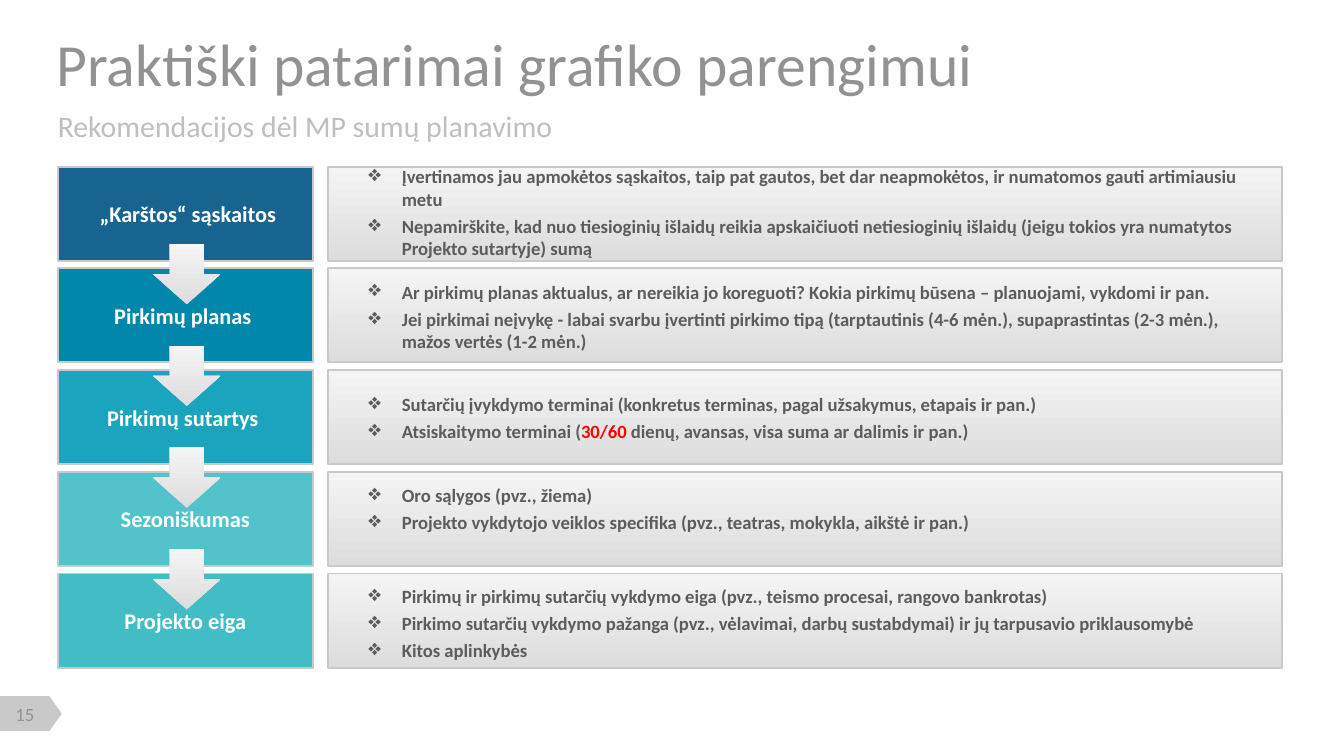
import lxml.etree
import pptx
import pptx.dml.color
import pptx.enum.shapes
import pptx.enum.text
import pptx.oxml.ns
import pptx.util

SHAPE = pptx.enum.shapes.MSO_SHAPE
ALIGN = pptx.enum.text.PP_ALIGN
ANCHOR = pptx.enum.text.MSO_ANCHOR

SLIDE_WIDTH = pptx.util.Inches(10)
SLIDE_HEIGHT = SLIDE_WIDTH * 9 // 16
CELL = SLIDE_WIDTH / 100

FONT = "Calibri"
GREY = "C9C9C9"
TITLE_GREY = "929292"
ADVICE_GREY = "5C5C5C"
HIGHLIGHT = "30/60 "
HIGHLIGHT_RED = "FF0000"

ROW_HEIGHT = 7
ROW_PITCH = 7.57
TOPICS = [
    (" „Karštos“ sąskaitos", "176490", -0.1, 7.2, [
        "Įvertinamos jau apmokėtos sąskaitos, taip pat gautos, bet dar neapmokėtos, "
        "ir numatomos gauti artimiausiu metu",
        "Nepamirškite, kad nuo tiesioginių išlaidų reikia apskaičiuoti netiesioginių "
        "išlaidų (jeigu tokios yra numatytos Projekto sutartyje) sumą",
    ]),
    ("Pirkimų planas ", "0187AC", 0.9, 5.5, [
        "Ar pirkimų planas aktualus, ar nereikia jo koreguoti? Kokia pirkimų būsena – "
        "planuojami, vykdomi ir pan.",
        "Jei pirkimai neįvykę - labai svarbu įvertinti pirkimo tipą (tarptautinis "
        "(4-6 mėn.), supaprastintas (2-3 mėn.), mažos vertės (1-2 mėn.)",
    ]),
    ("Pirkimų sutartys ", "1AA4BE", 1.7, 3.8, [
        "Sutarčių įvykdymo terminai (konkretus terminas, pagal užsakymus, etapais ir pan.)",
        "Atsiskaitymo terminai (30/60 dienų, avansas, visa suma ar dalimis ir pan.)",
    ]),
    ("Sezoniškumas", "52C3CB", 0.9, 3.8, [
        "Oro sąlygos (pvz., žiema)",
        "Projekto vykdytojo veiklos specifika (pvz., teatras, mokykla, aikštė ir pan.)",
    ]),
    ("Projekto eiga", "42BDC6", 0.85, 5.9, [
        "Pirkimų ir pirkimų sutarčių vykdymo eiga (pvz., teismo procesai, rangovo bankrotas)",
        "Pirkimo sutarčių vykdymo pažanga (pvz., vėlavimai, darbų sustabdymai) ir jų "
        "tarpusavio priklausomybė",
        "Kitos aplinkybės",
    ]),
]


def rgb(value):
    return pptx.dml.color.RGBColor.from_string(value)


def to_slide(box):
    return [round(cells * CELL) for cells in box]


def style(run, size, color, bold=False):
    run.font.name = FONT
    run.font.size = pptx.util.Pt(size)
    run.font.bold = bold
    run.font.color.rgb = rgb(color)


def add_panel(slide, preset, box, fill=None, border=True):
    panel = slide.shapes.add_shape(preset, *to_slide(box))
    panel.shadow.inherit = False
    if fill:
        panel.fill.solid()
        panel.fill.fore_color.rgb = rgb(fill)
    else:
        panel.fill.gradient()
        panel.fill.gradient_angle = 90
        for stop, shade in zip(panel.fill.gradient_stops, ("DDDDDD", "F4F4F4")):
            stop.color.rgb = rgb(shade)
    if border:
        panel.line.color.rgb = rgb(GREY)
        panel.line.width = pptx.util.Pt(1)
    else:
        panel.line.fill.background()
    return panel


def add_frame(slide, box, anchor=ANCHOR.MIDDLE, wrap=True):
    frame = slide.shapes.add_textbox(*to_slide(box)).text_frame
    frame.margin_left = frame.margin_right = 0
    frame.margin_top = frame.margin_bottom = 0
    frame.vertical_anchor = anchor
    frame.word_wrap = wrap
    return frame


def add_line(slide, box, text, size, color, align=ALIGN.LEFT, wrap=True):
    line = add_frame(slide, box, wrap=wrap).paragraphs[0]
    line.text = text
    line.alignment = align
    style(line.runs[0], size, color)


def add_bullet(paragraph):
    properties = paragraph._p.get_or_add_pPr()
    indent = pptx.util.Inches(0.25)
    properties.set("marL", str(indent))
    properties.set("indent", str(-indent))
    for tag, name, value in (("a:buSzPct", "val", "120000"), ("a:buChar", "char", "❖")):
        mark = lxml.etree.SubElement(properties, pptx.oxml.ns.qn(tag))
        mark.set(name, value)


def add_heading(slide, box):
    left, top, width, height = box
    add_line(slide, (left, top, width, 3.9),
             "Praktiški patarimai grafiko parengimui", 32, TITLE_GREY)
    add_line(slide, (left + 0.1, top + height - 1.9, width, 1.9),
             "Rekomendacijos dėl MP sumų planavimo", 16, "BFBFBF", wrap=False)


def add_topic(slide, box, topic, color):
    panel = add_panel(slide, SHAPE.RECTANGLE, box, color)
    frame = panel.text_frame
    frame.text = topic
    frame.vertical_anchor = ANCHOR.MIDDLE
    frame.paragraphs[0].alignment = ALIGN.CENTER
    style(frame.paragraphs[0].runs[0], 12, "FFFFFF", True)


def add_advice(slide, box, offset, text_height, tips):
    left, top, width, height = box
    add_panel(slide, SHAPE.RECTANGLE, box)
    frame = add_frame(slide, (left + 3, top + offset, width - 5.9, text_height), ANCHOR.TOP)
    frame.auto_size = pptx.enum.text.MSO_AUTO_SIZE.SHAPE_TO_FIT_TEXT
    for index, tip in enumerate(tips):
        paragraph = frame.add_paragraph() if index else frame.paragraphs[0]
        add_bullet(paragraph)
        paragraph.space_after = pptx.util.Pt(2.5)
        for part in filter(None, tip.partition(HIGHLIGHT)):
            run = paragraph.add_run()
            run.text = part
            style(run, 10, HIGHLIGHT_RED if part == HIGHLIGHT else ADVICE_GREY, True)


def add_steps(slide, box):
    left, top, width, height = box
    topic_width, advice_width = 19, 71
    for row, (topic, color, offset, text_height, tips) in enumerate(TOPICS):
        row_top = top + row * ROW_PITCH
        add_topic(slide, (left, row_top, topic_width, ROW_HEIGHT), topic, color)
        add_advice(slide, (left + width - advice_width, row_top, advice_width, ROW_HEIGHT),
                   offset, text_height, tips)
    for row in range(len(TOPICS) - 1):
        arrow_top = top + row * ROW_PITCH + 5.75
        add_panel(slide, SHAPE.DOWN_ARROW, (left + 7.1, arrow_top, 5, 4.5), border=False)


def add_page_number(slide, box):
    left, top, width, height = box
    tag_box = (left + (width - height) / 2, top + (height - width) / 2, height, width)
    tag = add_panel(slide, SHAPE.FLOWCHART_OFFPAGE_CONNECTOR, tag_box, GREY, border=False)
    tag.rotation = 270
    add_line(slide, (left + 0.2, top + 0.5, 3.3, 1.7), "15", 10, TITLE_GREY, ALIGN.CENTER)


def main():
    presentation = pptx.Presentation()
    presentation.slide_width = SLIDE_WIDTH
    presentation.slide_height = SLIDE_HEIGHT
    slide = presentation.slides.add_slide(presentation.slide_layouts[6])
    add_page_number(slide, (0, 51.8, 4.6, 2.6))
    add_heading(slide, (4.2, 2.7, 91.5, 7.6))
    add_steps(slide, (4.3, 12.4, 91.1, 37.3))
    presentation.save("out.pptx")


if __name__ == "__main__":
    main()
